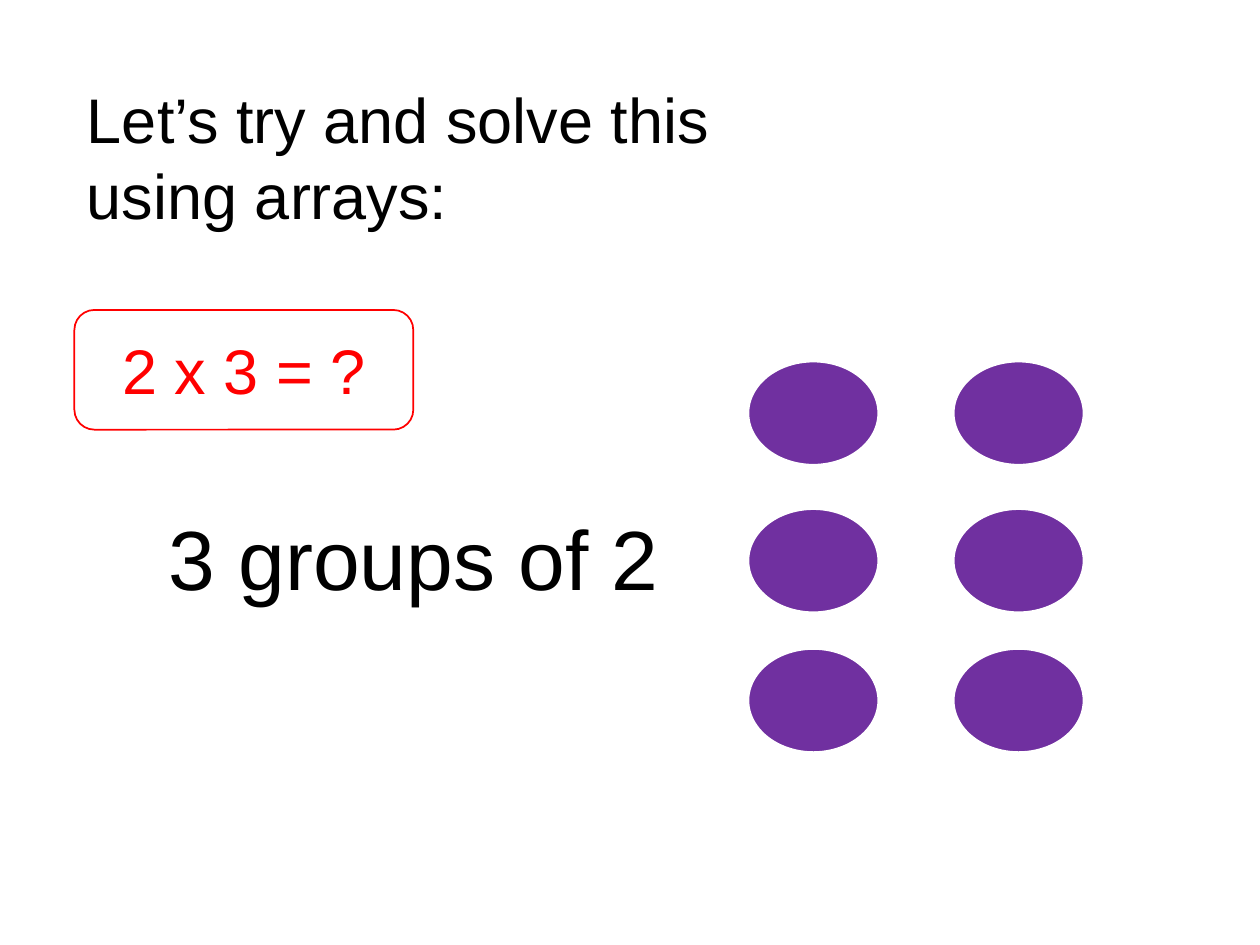
from itertools import product

from pptx import Presentation
from pptx.dml.color import RGBColor
from pptx.enum.shapes import MSO_SHAPE
from pptx.enum.text import MSO_ANCHOR, MSO_AUTO_SIZE, PP_ALIGN
from pptx.util import Pt

BLACK = RGBColor(0x00, 0x00, 0x00)
WHITE = RGBColor(0xFF, 0xFF, 0xFF)
RED = RGBColor(0xFF, 0x00, 0x00)
PURPLE = RGBColor(0x70, 0x30, 0xA0)

COUNTER_COLUMNS = (427.7, 545)
COUNTER_ROWS = (206.6, 290.9, 370.8)
COUNTER_SIZE = (74.2, 59)


def set_values(target, values):
    """Set each attribute of the target from a dict."""
    for name, value in values.items():
        setattr(target, name, value)


def place(shape, left, top, width, height):
    """Move and size a shape, in points."""
    set_values(shape, {"left": Pt(left), "top": Pt(top),
                       "width": Pt(width), "height": Pt(height)})


def write_text(shape, text, size, color, align, anchor):
    """Put one formatted paragraph into a shape."""
    frame = shape.text_frame
    set_values(frame, {"word_wrap": True, "auto_size": MSO_AUTO_SIZE.NONE,
                       "vertical_anchor": anchor})
    para = frame.paragraphs[0]
    para.alignment = align
    span = para.add_run()
    span.text = text
    set_values(span.font, {"name": "Arial", "size": Pt(size)})
    span.font.color.rgb = color


def add_title(page, text, bounds):
    """Fill the title placeholder."""
    title = page.shapes.title
    place(title, *bounds)
    write_text(title, text, 36, BLACK, PP_ALIGN.LEFT, MSO_ANCHOR.TOP)


def add_label(page, text, bounds):
    """Add a large centred text box."""
    box = page.shapes.add_textbox(*map(Pt, bounds))
    write_text(box, text, 48, BLACK, PP_ALIGN.CENTER, MSO_ANCHOR.TOP)


def add_outlined_shape(page, kind, bounds, fill, line):
    """Add a flat preset shape with a one-point outline."""
    shape = page.shapes.add_shape(kind, *map(Pt, bounds))
    shape.shadow.inherit = False
    shape.fill.solid()
    shape.fill.fore_color.rgb = fill
    shape.line.color.rgb = line
    shape.line.width = Pt(1)
    return shape


def add_question(page, text, bounds):
    """Add the rounded box that holds the sum."""
    box = add_outlined_shape(page, MSO_SHAPE.ROUNDED_RECTANGLE, bounds, WHITE, RED)
    write_text(box, text, 36, RED, PP_ALIGN.CENTER, MSO_ANCHOR.MIDDLE)


def add_array(page):
    """Add the counters in rows and columns."""
    for top, left in product(COUNTER_ROWS, COUNTER_COLUMNS):
        add_outlined_shape(page, MSO_SHAPE.OVAL, (left, top, *COUNTER_SIZE),
                           PURPLE, WHITE)


def main():
    """Build and save the slide."""
    deck = Presentation()
    set_values(deck, {"slide_width": Pt(720), "slide_height": Pt(540)})
    page = deck.slides.add_slide(deck.slide_layouts.get_by_name("Title Only"))
    add_title(page, "Let’s try and solve this using arrays:", (42.5, 42.5, 385.2, 94.3))
    add_question(page, "2 x 3 = ?", (42.5, 177.1, 193.7, 68.4))
    add_label(page, "3 groups of 2", (26.6, 285.8, 419.8, 65.5))
    add_array(page)
    deck.save("out.pptx")


if __name__ == "__main__":
    main()
